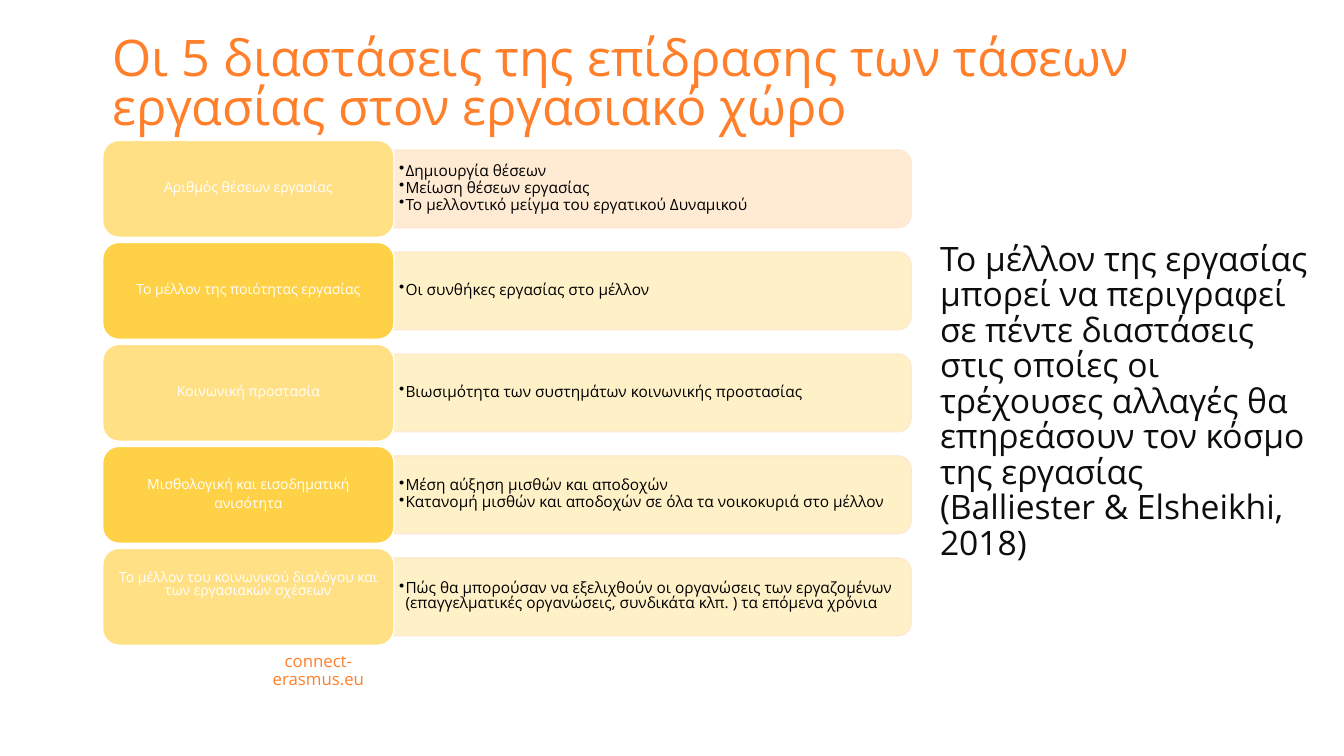
"""Builds the slide on the five dimensions of work trends."""
from dataclasses import dataclass

import pptx
import pptx.dml.color
import pptx.enum.shapes
import pptx.enum.text
import pptx.oxml
import pptx.oxml.ns
import pptx.util

Cm = pptx.util.Cm
Pt = pptx.util.Pt
SHAPE = pptx.enum.shapes.MSO_SHAPE
ALIGN = pptx.enum.text.PP_ALIGN
ANCHOR = pptx.enum.text.MSO_ANCHOR
COLORS = {
    "orange": "FF7F2A", "ink": "0D0D0D", "black": "000000", "white": "FFFFFF",
    "peach": "FFE8CF", "cream": "FFF0C2", "pale": "FFE085", "gold": "FFD147",
}
FONT = "Open Sans"
CARD_X, CARD_Y, CARD_W, CARD_H = 2.59, 3.54, 7.34, 2.44
PANEL_W, PANEL_H = 13.03, 1.96
ROW_STEP = 2.57


@dataclass
class Dimension:
    heading: list[str]
    points: list[str]
    card: str
    panel: str = "cream"
    bottom: float = 0.06


@dataclass
class Style:
    size: float
    color: str
    spacing: float
    after: float = 0
    align: ALIGN = ALIGN.LEFT
    anchor: ANCHOR = ANCHOR.MIDDLE
    insets: tuple[float, float, float, float] = (0.25, 0.13, 0.25, 0.13)
    bullet: bool = False


DIMENSIONS = [
    Dimension(["Αριθμός θέσεων εργασίας"],
              ["Δημιουργία θέσεων", "Μείωση θέσεων εργασίας",
               "Το μελλοντικό μείγμα του εργατικού Δυναμικού"], "pale", "peach"),
    Dimension(["Το μέλλον της ποιότητας εργασίας"],
              ["Οι συνθήκες εργασίας στο μέλλον"], "gold"),
    Dimension(["Κοινωνική προστασία"],
              ["Βιωσιμότητα των συστημάτων κοινωνικής προστασίας"], "pale"),
    Dimension(["Μισθολογική και εισοδηματική", "ανισότητα"],
              ["Μέση αύξηση μισθών και αποδοχών",
               "Κατανομή μισθών και αποδοχών σε όλα τα νοικοκυριά στο μέλλον"], "gold"),
    Dimension(["Το μέλλον του κοινωνικού διαλόγου και των εργασιακών σχέσεων"],
              ["Πώς θα μπορούσαν να εξελιχθούν οι οργανώσεις των εργαζομένων "
               "(επαγγελματικές οργανώσεις, συνδικάτα κλπ. ) τα επόμενα χρόνια"],
              "pale", bottom=0.66),
]


def rgb(name: str) -> pptx.dml.color.RGBColor:
    return pptx.dml.color.RGBColor.from_string(COLORS[name])


def write(tf, lines: list[str], style: Style) -> None:
    tf.word_wrap = True
    tf.vertical_anchor = style.anchor
    tf.margin_left, tf.margin_top, tf.margin_right, tf.margin_bottom = map(Cm, style.insets)
    for i, line in enumerate(lines):
        p = tf.add_paragraph() if i else tf.paragraphs[0]
        p.alignment = style.align
        p.line_spacing = style.spacing
        p.space_after = Pt(style.after)
        if style.bullet:
            pPr = p._p.get_or_add_pPr()
            pPr.set("marL", str(Cm(0.16)))
            pPr.set("indent", str(Cm(-0.16)))
            bu = pptx.oxml.parse_xml(f'<a:buChar {pptx.oxml.ns.nsdecls("a")} char="•"/>')
            pPr.append(bu)
        r = p.add_run()
        r.text = line
        r.font.size = Pt(style.size)
        r.font.name = FONT
        r.font.color.rgb = rgb(style.color)


def add_text(s, x: float, y: float, w: float, h: float, lines: list[str], style: Style) -> None:
    write(s.shapes.add_textbox(Cm(x), Cm(y), Cm(w), Cm(h)).text_frame, lines, style)


def add_block(s, kind: SHAPE, x: float, y: float, w: float, h: float, fill: str, line: str):
    sp = s.shapes.add_shape(kind, Cm(x), Cm(y), Cm(w), Cm(h))
    sp.shadow.inherit = False
    sp.fill.solid()
    sp.fill.fore_color.rgb = rgb(fill)
    sp.line.color.rgb = rgb(line)
    sp.line.width = Pt(1)
    return sp


def add_dimension(s, y: float, dim: Dimension) -> None:
    panel_x = CARD_X + CARD_W
    mid = y + CARD_H / 2
    panel = add_block(s, SHAPE.ROUND_2_SAME_RECTANGLE,
                      panel_x + (PANEL_W - PANEL_H) / 2, mid - PANEL_W / 2,
                      PANEL_H, PANEL_W, dim.panel, "peach")
    panel.rotation = 90
    for clr in panel._element.spPr.iter(pptx.oxml.ns.qn("a:srgbClr")):
        clr.append(pptx.oxml.parse_xml(f'<a:alpha {pptx.oxml.ns.nsdecls("a")} val="90000"/>'))
    add_text(s, panel_x, mid - 0.88, PANEL_W - 0.08, 1.76, dim.points,
             Style(11, "black", 0.8, 1.65, insets=(0.13, 0.05, 0.13, 0.05), bullet=True))
    card = add_block(s, SHAPE.ROUNDED_RECTANGLE, CARD_X, y, CARD_W, CARD_H, dim.card, "white")
    write(card.text_frame, dim.heading,
          Style(10, "white", 0.8, 3.5, ALIGN.CENTER, insets=(0.1, 0.06, 0.1, dim.bottom)))


def main() -> None:
    prs = pptx.Presentation()
    prs.slide_width, prs.slide_height = Cm(33.87), Cm(19.05)
    s = prs.slides.add_slide(prs.slide_layouts[6])
    add_text(s, 2.59, 0.25, 30.9, 3.28,
             ["Οι 5 διαστάσεις της επίδρασης των τάσεων εργασίας στον εργασιακό χώρο"],
             Style(36, "orange", 0.8, anchor=ANCHOR.BOTTOM))
    add_text(s, 23.44, 5.99, 10.06, 7.82,
             ["Το μέλλον της εργασίας μπορεί να περιγραφεί σε πέντε διαστάσεις στις οποίες "
              "οι τρέχουσες αλλαγές θα επηρεάσουν τον κόσμο της εργασίας",
              "(Balliester & Elsheikhi, 2018)"],
             Style(24, "ink", 0.88, anchor=ANCHOR.TOP))
    add_text(s, 5.79, 16.54, 4.47, 0.76, ["connect-erasmus.eu"],
             Style(12, "orange", 0.85, align=ALIGN.CENTER))
    for i, dim in enumerate(DIMENSIONS):
        add_dimension(s, CARD_Y + i * ROW_STEP, dim)
    prs.save("out.pptx")


if __name__ == "__main__":
    main()
